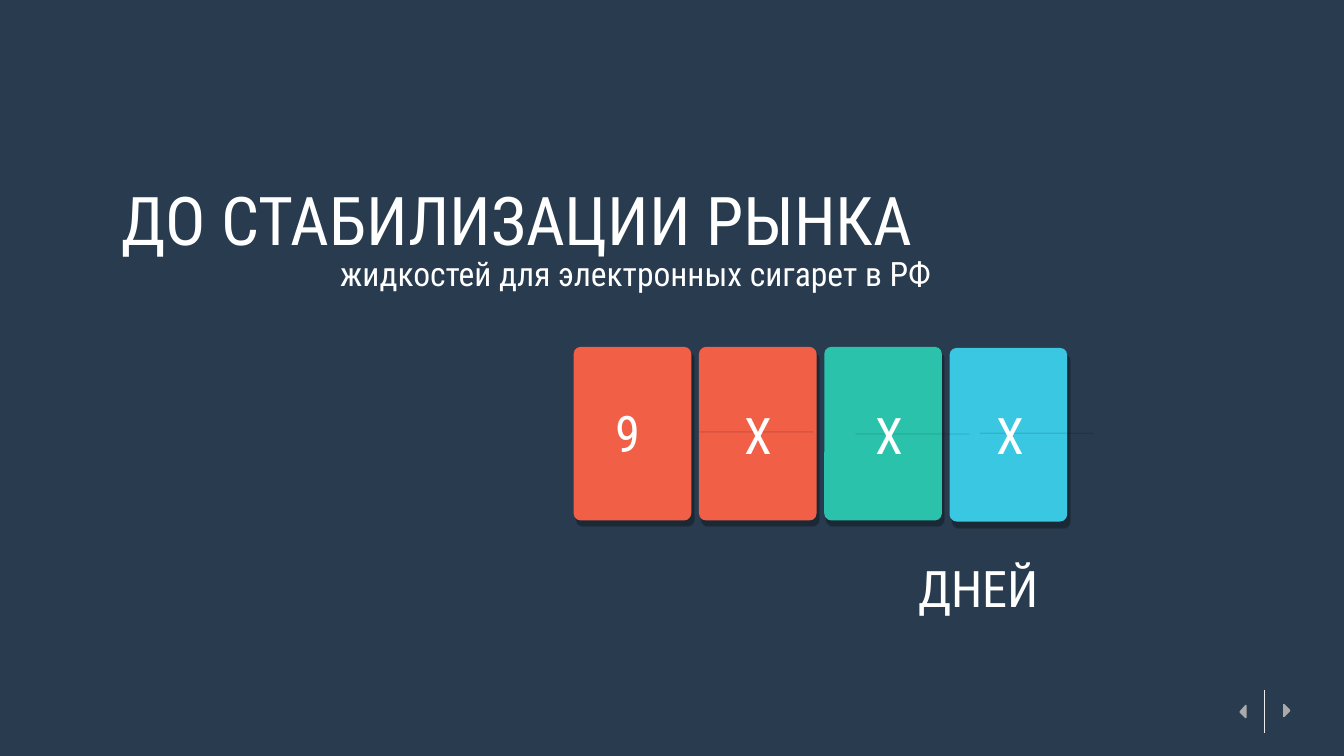
from lxml.etree import SubElement
from pptx import Presentation
from pptx.dml.color import RGBColor
from pptx.enum.shapes import MSO_CONNECTOR as Connector, MSO_SHAPE as Shape
from pptx.enum.text import MSO_ANCHOR as Anchor
from pptx.oxml.ns import qn
from pptx.util import Pt

WIDTH, HEIGHT = 1920, 1080
FONT = "Roboto Condensed"
COLORS = {
    "navy": "283B4F", "white": "FFFFFF", "red": "F15F47", "teal": "2BC2AC",
    "blue": "3AC7E2", "black": "000000", "divider": "EBEBEB", "arrow": "AAAAAA",
}


def color(name):
    """Return the named palette colour."""
    return RGBColor.from_string(COLORS[name])


def paint(shape, fill):
    """Give a shape a flat fill with no outline or shadow."""
    shape.shadow.inherit = False
    shape.fill.solid()
    shape.fill.fore_color.rgb = color(fill)
    shape.line.fill.background()


def add_text(slide, text, left, top, width, height, size=72, fill="white"):
    """Add a vertically centred line of text."""
    frame = slide.shapes.add_textbox(Pt(left), Pt(top), Pt(width), Pt(height)).text_frame
    frame.word_wrap = True
    frame.vertical_anchor = Anchor.MIDDLE
    frame.margin_left = frame.margin_right = frame.margin_top = frame.margin_bottom = Pt(4)
    paragraph = frame.paragraphs[0]
    paragraph.text = text
    font = paragraph.font
    font.name, font.size, font.color.rgb = FONT, Pt(size), color(fill)


def add_line(slide, start, end, fill, opacity=100):
    """Add a thin straight line with the given opacity in percent."""
    line = slide.shapes.add_connector(Connector.STRAIGHT, *map(Pt, start + end))
    line.line.width = Pt(2)
    line.line.color.rgb = color(fill)
    properties = line._element.spPr
    if opacity < 100:
        rgb = next(properties.iter(qn("a:srgbClr")))
        SubElement(rgb, qn("a:alpha"), val=str(opacity * 1000))
    SubElement(properties, qn("a:effectLst"))


def add_card(slide, left, top, width, height, fill):
    """Add a rounded card with a soft shadow below it."""
    card = slide.shapes.add_shape(Shape.ROUNDED_RECTANGLE, Pt(left), Pt(top), Pt(width), Pt(height))
    card.adjustments[0] = 0.06
    paint(card, fill)
    effects = card._element.spPr.find(qn("a:effectLst"))
    shadow = SubElement(effects, qn("a:outerShdw"), blurRad=str(Pt(1)), dist=str(Pt(9)),
                        dir=str(69 * 60000), algn="ctr", rotWithShape="0")
    rgb = SubElement(shadow, qn("a:srgbClr"), val=COLORS["black"])
    SubElement(rgb, qn("a:alpha"), val="30000")


def add_counter(slide, left, top):
    """Add the four day-counter cards, their fold lines and digits."""
    width, height, pitch = 168, 248, 179
    cards = [
        ("9", "red", 0, (55.5, 74, 50), None),
        ("X", "red", 0, (61.5, 77, 58), (1, 121.5)),
        ("X", "teal", 0, (69.5, 77, 58), (44.5, 124.5)),
        ("X", "blue", 1.5, (62.5, 77, 58), (43, 123.5)),
    ]
    lefts = [left + index * pitch for index in range(len(cards))]
    for x, (_, fill, drop, _, _) in zip(lefts, cards):
        add_card(slide, x, top + drop, width, height, fill)
    for x, (*_, fold) in zip(lefts, cards):
        if fold:
            start, y = x + fold[0], top + fold[1]
            add_line(slide, (start, y), (start + 163, y), "black", opacity=10)
    for x, (digit, _, _, (dx, dy, digit_width), _) in zip(lefts, cards):
        add_text(slide, digit, x + dx, top + dy, digit_width, 95)


def add_arrow(slide, left, top, direction):
    """Add a small blunt arrow pointing left (-1) or right (1)."""
    width, height = 10, 19
    outline = [(0, 1), (1, 0), (2, 0), (10, 8.5), (10, 10.5), (2, 19), (1, 19), (0, 18)]
    points = [(left + (x if direction > 0 else width - x), top + y) for x, y in outline]
    builder = slide.shapes.build_freeform(*points[0], scale=Pt(1))
    builder.add_line_segments(points[1:], close=True)
    paint(builder.convert_to_shape(), "arrow")


def add_navigation(slide, left, top):
    """Add the divider with an arrow on each side."""
    add_line(slide, (left + 35.5, top), (left + 35.5, top + 61), "divider")
    add_arrow(slide, left, top + 21.5, -1)
    add_arrow(slide, left + 62, top + 20, 1)


def add_heading(slide, left, top):
    """Add the title and its subtitle."""
    add_text(slide, "ДО СТАБИЛИЗАЦИИ РЫНКА", left, top, 1369, 125, size=96)
    add_text(slide, "жидкостей для электронных сигарет в РФ",
             left + 312, top + 106.5, 989, 66, size=48)


def add_background(slide, width, height):
    """Cover the slide with the dark ground."""
    ground = slide.shapes.add_shape(Shape.RECTANGLE, 0, 0, Pt(width), Pt(height))
    paint(ground, "navy")


def main():
    """Build and save the countdown slide."""
    presentation = Presentation()
    presentation.slide_width, presentation.slide_height = Pt(WIDTH), Pt(HEIGHT)
    slide = presentation.slides.add_slide(presentation.slide_layouts[6])
    add_background(slide, WIDTH, HEIGHT)
    add_navigation(slide, 1771, 985.5)
    add_heading(slide, 170, 250)
    add_counter(slide, 819.5, 495.5)
    add_text(slide, "ДНЕЙ", 1307.5, 791.5, 216, 95)
    presentation.save("out.pptx")


if __name__ == "__main__":
    main()
